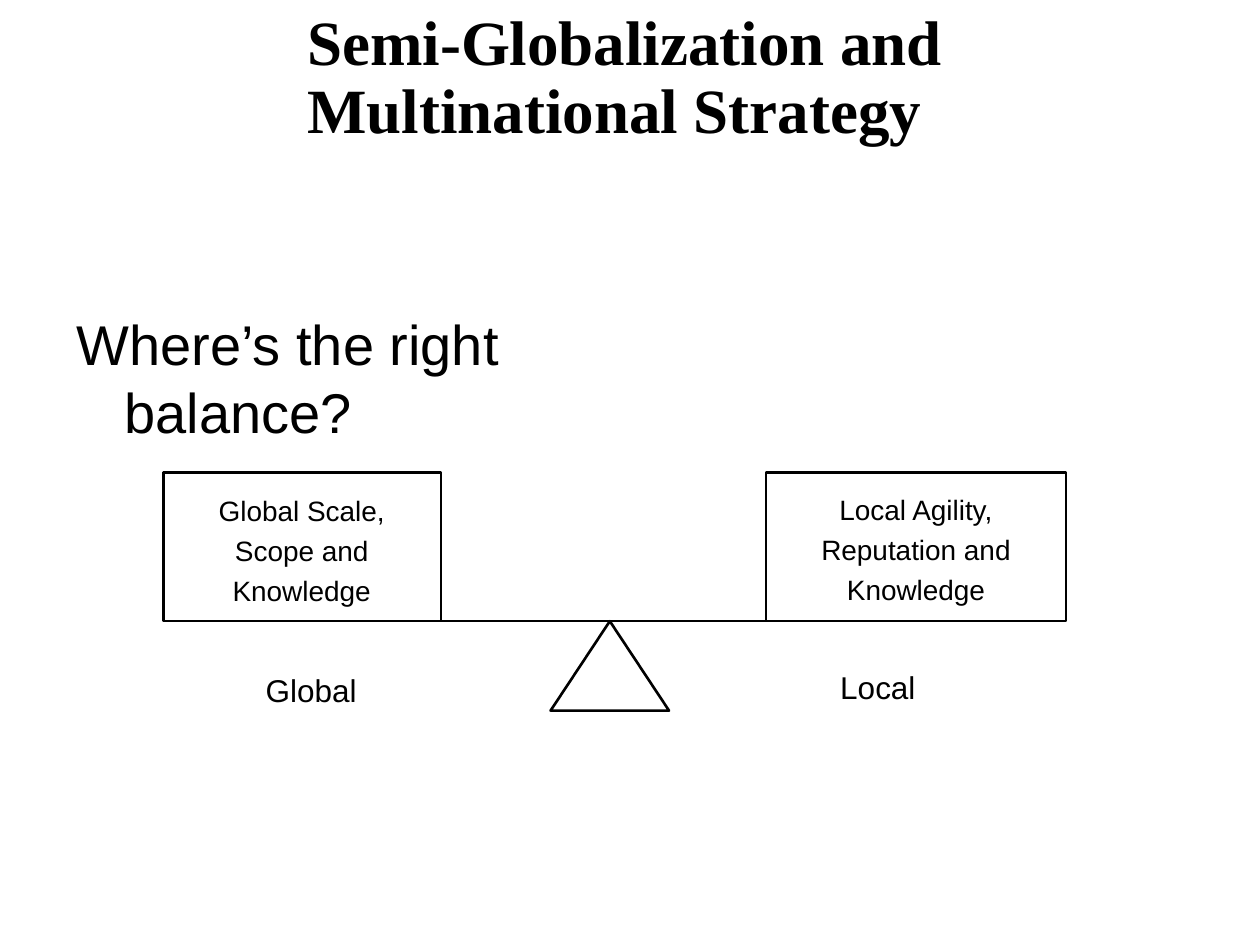
from lxml import etree
from pptx import Presentation
from pptx.dml.color import RGBColor
from pptx.enum.shapes import MSO_CONNECTOR, MSO_SHAPE
from pptx.enum.text import MSO_ANCHOR, PP_ALIGN
from pptx.oxml.ns import qn
from pptx.util import Inches, Pt

BLACK = RGBColor(0, 0, 0)
LEFT, CENTER = PP_ALIGN.LEFT, PP_ALIGN.CENTER
TOP, MIDDLE = MSO_ANCHOR.TOP, MSO_ANCHOR.MIDDLE
RECTANGLE, TRIANGLE = MSO_SHAPE.RECTANGLE, MSO_SHAPE.ISOSCELES_TRIANGLE
STRAIGHT = MSO_CONNECTOR.STRAIGHT
LINE_WIDTH = Pt(1.5)
BEAM_Y = 4.93


def add_text(page, box, lines, size, font="Arial", bold=False, align=LEFT,
             anchor=TOP, wrap=False):
    """Place one paragraph per line, in a box given in inches."""
    text_box = page.shapes.add_textbox(*map(Inches, box))
    frame = text_box.text_frame
    frame.word_wrap = wrap
    frame.vertical_anchor = anchor
    for index, line in enumerate(lines):
        para = frame.paragraphs[0] if index == 0 else frame.add_paragraph()
        para.alignment = align
        if index:
            para.space_before = Pt(size * 0.23)
        span = para.add_run()
        span.text = line
        span.font.name = font
        span.font.size = Pt(size)
        span.font.bold = bold
        span.font.color.rgb = BLACK
    return frame


def add_outline(page, kind, box):
    shape = page.shapes.add_shape(kind, *map(Inches, box))
    shape.shadow.inherit = False
    shape.fill.background()
    shape.line.color.rgb = BLACK
    shape.line.width = LINE_WIDTH


def add_title(page, box):
    frame = add_text(page, box, ["Semi-Globalization and Multinational Strategy"],
                     36, "Times New Roman", bold=True, anchor=MIDDLE, wrap=True)
    frame.paragraphs[0].line_spacing = 0.9


def add_question(page, box):
    frame = add_text(page, box, ["Where’s the right balance?"], 32, wrap=True)
    frame.margin_right = Inches(0.6)
    properties = frame.paragraphs[0]._p.get_or_add_pPr()
    properties.set("marL", str(Inches(0.38)))
    properties.set("indent", str(Inches(-0.38)))


def add_beam(page, left, right):
    beam = page.shapes.add_connector(STRAIGHT, Inches(left), Inches(BEAM_Y),
                                     Inches(right), Inches(BEAM_Y))
    beam.line.color.rgb = BLACK
    beam.line.width = LINE_WIDTH
    etree.SubElement(beam._element.spPr, qn("a:effectLst"))


def add_weight(page, box, text_box, lines, label_box, label):
    """Draw one side of the scale: its box, its text and the label below."""
    add_outline(page, RECTANGLE, box)
    add_text(page, text_box, lines, 16, align=CENTER)
    add_text(page, label_box, [label], 18)


def main():
    deck = Presentation()
    deck.slide_width, deck.slide_height = Inches(10), Inches(7.5)
    page = deck.slides.add_slide(deck.slide_layouts[6])

    add_title(page, (2.34, 0, 7.42, 1.25))
    add_beam(page, 1.3, 8.46)
    add_weight(page, (1.3, 3.75, 2.2, 1.18), (1.63, 3.87, 1.53, 1.02),
               ["Global Scale,", "Scope and", "Knowledge"],
               (2.01, 5.28, 1.02, 0.4), "Global")
    add_weight(page, (6.08, 3.75, 2.38, 1.18), (6.41, 3.86, 1.72, 1.02),
               ["Local Agility,", "Reputation and", "Knowledge"],
               (6.57, 5.25, 0.81, 0.4), "Local")
    add_outline(page, TRIANGLE, (4.37, BEAM_Y, 0.94, 0.71))
    add_question(page, (0.51, 2.41, 5.48, 0.63))

    deck.save("out.pptx")


if __name__ == "__main__":
    main()
